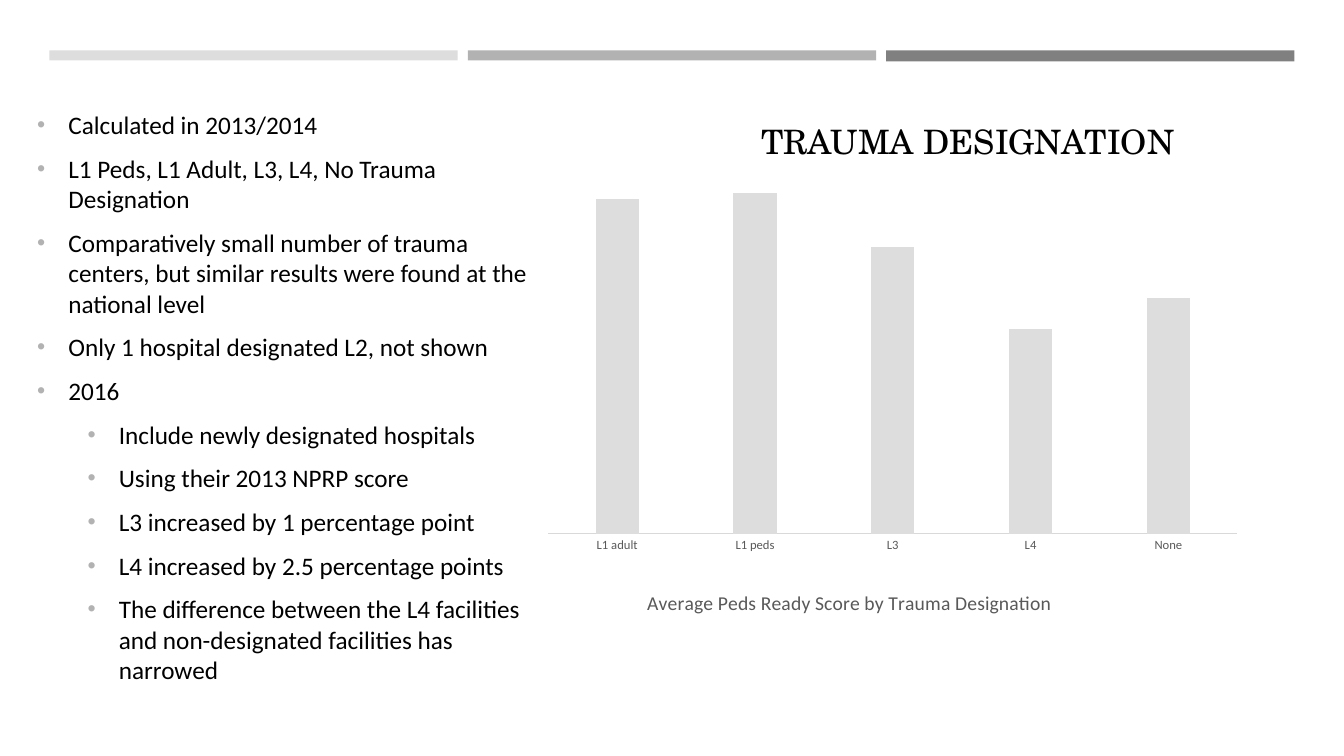
"""Builds the trauma designation slide with its findings and score chart."""
import lxml.etree
import pptx
import pptx.chart.data
import pptx.dml.color
import pptx.enum.chart
import pptx.enum.shapes
import pptx.enum.text
import pptx.oxml
import pptx.oxml.ns
import pptx.util

RGBColor = pptx.dml.color.RGBColor
BLACK = RGBColor(0x00, 0x00, 0x00)
PALE = RGBColor(0xDD, 0xDD, 0xDD)
SILVER = RGBColor(0xB2, 0xB2, 0xB2)
GREY = RGBColor(0x80, 0x80, 0x80)
LABEL = RGBColor(0x59, 0x59, 0x59)
AXIS = RGBColor(0xD9, 0xD9, 0xD9)

SLIDE_WIDTH = pptx.util.Inches(13.33)
SLIDE_HEIGHT = pptx.util.Inches(7.5)
GRID = 100

FINDINGS = [
    (0, "Calculated in 2013/2014"),
    (0, "L1 Peds, L1 Adult, L3, L4, No Trauma Designation"),
    (0, "Comparatively small number of trauma centers, but similar results "
        "were found at the national level"),
    (0, "Only 1 hospital designated L2, not shown"),
    (0, "2016"),
    (1, "Include newly designated hospitals"),
    (1, "Using their 2013 NPRP score"),
    (1, "L3 increased by 1 percentage point"),
    (1, "L4 increased by 2.5 percentage points"),
    (1, "The difference between the L4 facilities and non-designated "
        "facilities has narrowed"),
]
SCORES = {"L1 adult": 98, "L1 peds": 100, "L3": 84, "L4": 60, "None": 69}


def cell(column, row, columns, rows):
    """Turn a place on the 100 by 100 grid into slide lengths."""
    return (int(SLIDE_WIDTH * column / GRID), int(SLIDE_HEIGHT * row / GRID),
            int(SLIDE_WIDTH * columns / GRID), int(SLIDE_HEIGHT * rows / GRID))


def style(font, size, color, name="Calibri"):
    """Set size, colour and typeface of a font."""
    font.size = pptx.util.Pt(size)
    font.color.rgb = color
    font.name = name


def add_header_bands(slide):
    """Draw the three bands along the top edge."""
    for index, (color, rows) in enumerate([(PALE, 1.33), (SILVER, 1.33), (GREY, 1.47)]):
        band = slide.shapes.add_shape(
            pptx.enum.shapes.MSO_SHAPE.RECTANGLE,
            *cell(3.68 + 31.13 * index, 6.67, 30.38, rows))
        band.shadow.inherit = False
        band.fill.solid()
        band.fill.fore_color.rgb = color
        band.line.fill.background()


def add_text_frame(slide, place, anchor):
    """Add a wrapping text box and return its frame."""
    frame = slide.shapes.add_textbox(*place).text_frame
    frame.word_wrap = True
    frame.vertical_anchor = anchor
    return frame


def add_heading(slide):
    """Write the slide heading."""
    frame = add_text_frame(slide, cell(55.89, 9.33, 32.26, 12.67),
                           pptx.enum.text.MSO_ANCHOR.BOTTOM)
    frame.text = "TRAUMA DESIGNATION"
    style(frame.paragraphs[0].runs[0].font, 24, BLACK, "TeX Gyre Schola")


def add_bullet(paragraph, level):
    """Give a paragraph its hanging indent and grey bullet."""
    properties = paragraph._p.get_or_add_pPr()
    properties.set("marL", str(pptx.util.Inches(0.31 + 0.5 * level)))
    properties.set("indent", str(pptx.util.Inches(-0.31)))
    namespace = pptx.oxml.ns.nsdecls("a")
    for bullet in (f'<a:buClr {namespace}><a:srgbClr val="{SILVER}"/></a:buClr>',
                   f'<a:buSzPct {namespace} val="92000"/>',
                   f'<a:buFont {namespace} typeface="Arial"/>',
                   f'<a:buChar {namespace} char="•"/>'):
        properties.append(pptx.oxml.parse_xml(bullet))


def add_findings(slide):
    """Write the two-level list of findings."""
    frame = add_text_frame(slide, cell(2.03, 12.4, 39.01, 87.6),
                           pptx.enum.text.MSO_ANCHOR.MIDDLE)
    frame.margin_bottom = int(SLIDE_HEIGHT * 0.08)
    frame.text = "\n".join(finding for _, finding in FINDINGS)
    for paragraph, (level, _) in zip(frame.paragraphs, FINDINGS):
        paragraph.level = level
        paragraph.space_before = pptx.util.Pt(3.6)
        paragraph.space_after = pptx.util.Pt(6)
        add_bullet(paragraph, level)
        style(paragraph.runs[0].font, 18, BLACK)


def set_layout(element, **shares):
    """Place a chart part by shares of the chart area."""
    chart_tag = pptx.oxml.ns.qn
    for old in element.findall(chart_tag("c:layout")):
        element.remove(old)
    layout = lxml.etree.Element(chart_tag("c:layout"))
    manual = lxml.etree.SubElement(layout, chart_tag("c:manualLayout"))
    settings = {"xMode": "edge", "yMode": "edge", **shares}
    if "w" in shares:
        settings = {"layoutTarget": "inner", **settings}
    for name, value in settings.items():
        lxml.etree.SubElement(manual, chart_tag(f"c:{name}")).set("val", str(value))
    text = element.find(chart_tag("c:tx"))
    element.insert(0 if text is None else 1, layout)


def add_score_chart(slide):
    """Chart the average score of each designation."""
    scores = pptx.chart.data.CategoryChartData(number_format="0.00")
    scores.categories = list(SCORES)
    scores.add_series("Series 1", list(SCORES.values()))
    chart = slide.shapes.add_chart(
        pptx.enum.chart.XL_CHART_TYPE.COLUMN_CLUSTERED,
        *cell(39.16, 21.73, 54.54, 61.87), scores).chart
    style(chart.font, 10, BLACK)
    chart.has_legend = False

    caption = chart.chart_title
    caption.text_frame.text = "Average Peds Ready Score by Trauma Designation"
    caption_font = caption.text_frame.paragraphs[0].runs[0].font
    style(caption_font, 14, LABEL)
    caption_font.bold = False
    set_layout(caption._element, x=0.16, y=0.9)

    columns = chart.plots[0]
    columns.gap_width = 219
    columns.overlap = -27
    columns.vary_by_categories = False
    fill = columns.series[0].format.fill
    fill.solid()
    fill.fore_color.rgb = PALE
    set_layout(chart._chartSpace.chart.plotArea, x=0.03, y=0.02, w=0.94, h=0.77)

    designations = chart.category_axis
    designations.major_tick_mark = pptx.enum.chart.XL_TICK_MARK.NONE
    style(designations.tick_labels.font, 9, LABEL)
    designations.format.line.color.rgb = AXIS
    designations.format.line.width = pptx.util.Pt(0.75)

    score_axis = chart.value_axis
    score_axis.visible = False
    score_axis.has_major_gridlines = False
    score_axis.minimum_scale = 0
    score_axis.maximum_scale = 105.6


def main():
    """Build and save the slide."""
    deck = pptx.Presentation()
    deck.slide_width = SLIDE_WIDTH
    deck.slide_height = SLIDE_HEIGHT
    slide = deck.slides.add_slide(deck.slide_layouts[6])
    add_header_bands(slide)
    add_heading(slide)
    add_findings(slide)
    add_score_chart(slide)
    deck.save("out.pptx")


if __name__ == "__main__":
    main()
